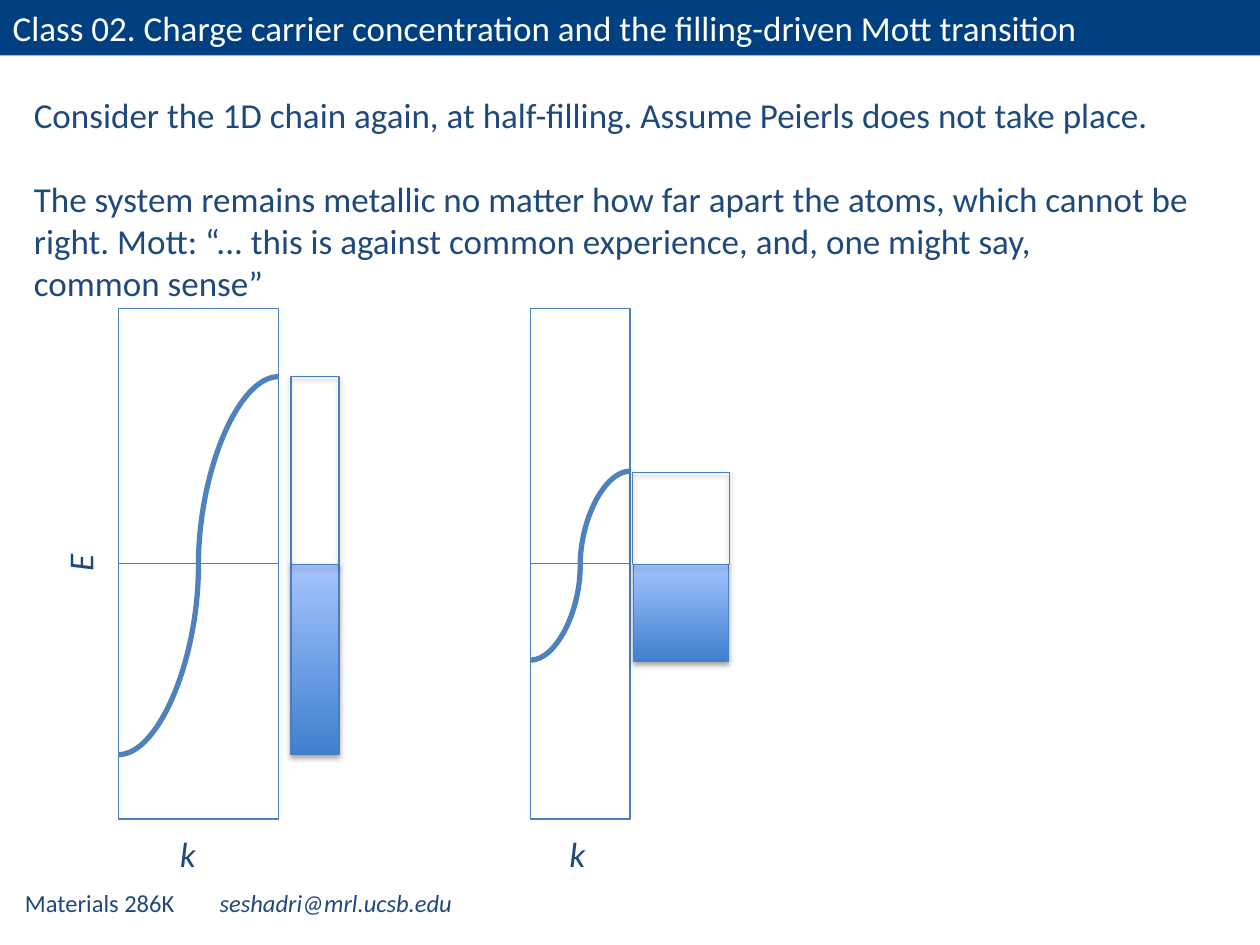
from lxml.etree import SubElement
from pptx import Presentation
from pptx.dml.color import RGBColor
from pptx.enum.shapes import MSO_CONNECTOR, MSO_SHAPE
from pptx.enum.text import MSO_ANCHOR, MSO_AUTO_SIZE, PP_ALIGN
from pptx.oxml.ns import qn
from pptx.util import Pt

SCALE = 9144
COLORS = {
    "banner": "004080",
    "white": "FFFFFF",
    "text": "1F497D",
    "outline": "4B7EBC",
    "curve": "4F81BD",
    "band_dark": "3F80CE",
    "band_light": "A4C4FF",
    "shadow": "000000",
}
BODY = {"name": "Calibri", "size": Pt(20)}
SYMBOL = {**BODY, "italic": True}
FOOTER = {"name": "Calibri", "size": Pt(14)}


def px(value):
    return round(value * SCALE)


def color(name):
    return RGBColor.from_string(COLORS[name])


class SlideBuilder:
    def __init__(self, presentation):
        self.slide = presentation.slides.add_slide(presentation.slide_layouts[5])

    def add_run(self, paragraph, text, font, color_name="text"):
        run = paragraph.add_run()
        run.text = text
        for attribute, value in font.items():
            setattr(run.font, attribute, value)
        run.font.color.rgb = color(color_name)

    def title(self, text, box):
        shape = self.slide.shapes.title
        for attribute, value in zip(("left", "top", "width", "height"), box):
            setattr(shape, attribute, px(value))
        shape.fill.solid()
        shape.fill.fore_color.rgb = color("banner")
        frame = shape.text_frame
        settings = {"auto_size": MSO_AUTO_SIZE.NONE, "vertical_anchor": MSO_ANCHOR.TOP}
        for attribute, value in settings.items():
            setattr(frame, attribute, value)
        paragraph = frame.paragraphs[0]
        paragraph.alignment = PP_ALIGN.LEFT
        self.add_run(paragraph, text, BODY, "white")

    def text(self, paragraphs, box, wrap=True, rotation=0, tab=None):
        shape = self.slide.shapes.add_textbox(*map(px, box))
        shape.rotation = rotation
        frame = shape.text_frame
        frame.word_wrap = wrap
        frame.auto_size = MSO_AUTO_SIZE.SHAPE_TO_FIT_TEXT
        for index, (space_before, runs) in enumerate(paragraphs):
            paragraph = frame.add_paragraph() if index else frame.paragraphs[0]
            if space_before:
                paragraph.space_before = Pt(space_before)
            if tab:
                properties = paragraph._p.get_or_add_pPr()
                stops = SubElement(properties, qn("a:tabLst"))
                SubElement(stops, qn("a:tab"), pos=str(px(tab)), algn="l")
            for content, font in runs:
                self.add_run(paragraph, content, font)

    def rectangle(self, box, gradient=False, shadow=False):
        shape = self.slide.shapes.add_shape(MSO_SHAPE.RECTANGLE, *map(px, box))
        shape.shadow.inherit = False
        shape.line.color.rgb = color("outline")
        shape.line.width = Pt(0.75)
        if gradient:
            shape.fill.gradient()
            shape.fill.gradient_angle = 90
            for stop, name in zip(shape.fill.gradient_stops, ("band_dark", "band_light")):
                stop.color.rgb = color(name)
        else:
            shape.fill.background()
        if shadow:
            effects = shape._element.spPr.find(qn("a:effectLst"))
            outer = SubElement(effects, qn("a:outerShdw"), blurRad="40000",
                               dist="23000", dir="5400000", rotWithShape="0")
            shade = SubElement(outer, qn("a:srgbClr"), val=COLORS["shadow"])
            SubElement(shade, qn("a:alpha"), val="35000")
        return shape

    def connector(self, kind, start, end, color_name, width):
        line = self.slide.shapes.add_connector(kind, *map(px, (*start, *end)))
        line.line.color.rgb = color(color_name)
        line.line.width = Pt(width)
        SubElement(line._element.spPr, qn("a:effectLst"))
        return line

    def band_diagram(self, left, width, half_band, empty, filled, label_left):
        top, height, middle = 245, 405, 448
        right = left + width
        frame = self.rectangle((left, top, width, height))
        self.connector(MSO_CONNECTOR.CURVE, (left, middle + half_band + 1),
                       (right, middle - half_band + 1), "curve", 3)
        level = self.connector(MSO_CONNECTOR.STRAIGHT, (left, middle),
                               (right, middle), "outline", 0.75)
        level.begin_connect(frame, 1)
        level.end_connect(frame, 3)
        for box, gradient in ((filled, True), (empty, False)):
            self.rectangle(box, gradient, shadow=True)
        self.text([(0, [("k", SYMBOL)])], (label_left, 656, 37, 44), wrap=False)


def main():
    presentation = Presentation()
    presentation.slide_width = px(1000)
    presentation.slide_height = px(750)
    builder = SlideBuilder(presentation)

    builder.title(
        "Class 02. Charge carrier concentration and the filling-driven Mott transition",
        (0, 0, 1000, 44))
    builder.text(
        [(0, [("Materials 286K\t ", FOOTER),
              ("seshadri@mrl.ucsb.edu", {**FOOTER, "italic": True})])],
        (10, 700, 434, 34), tab=150)
    builder.text(
        [(0, [("Consider the 1D chain again, at half-filling. "
               "Assume Peierls does not take place.", BODY)]),
         (24, [("The system remains metallic no matter how far apart the atoms, "
                "which cannot be right. Mott: “... this is against common experience, "
                "and, one might say,", BODY)]),
         (0, [("common sense”", BODY)])],
        (17, 69, 969, 178))

    builder.band_diagram(94, 127, 150, (231, 299, 38, 149), (231, 448, 38, 151), 133)
    builder.band_diagram(421, 79, 75, (502, 375, 77, 73), (503, 448, 75, 77), 442)
    builder.text([(0, [("E", SYMBOL)])], (45, 423, 37, 44), wrap=False, rotation=270)

    presentation.save("out.pptx")


if __name__ == "__main__":
    main()
